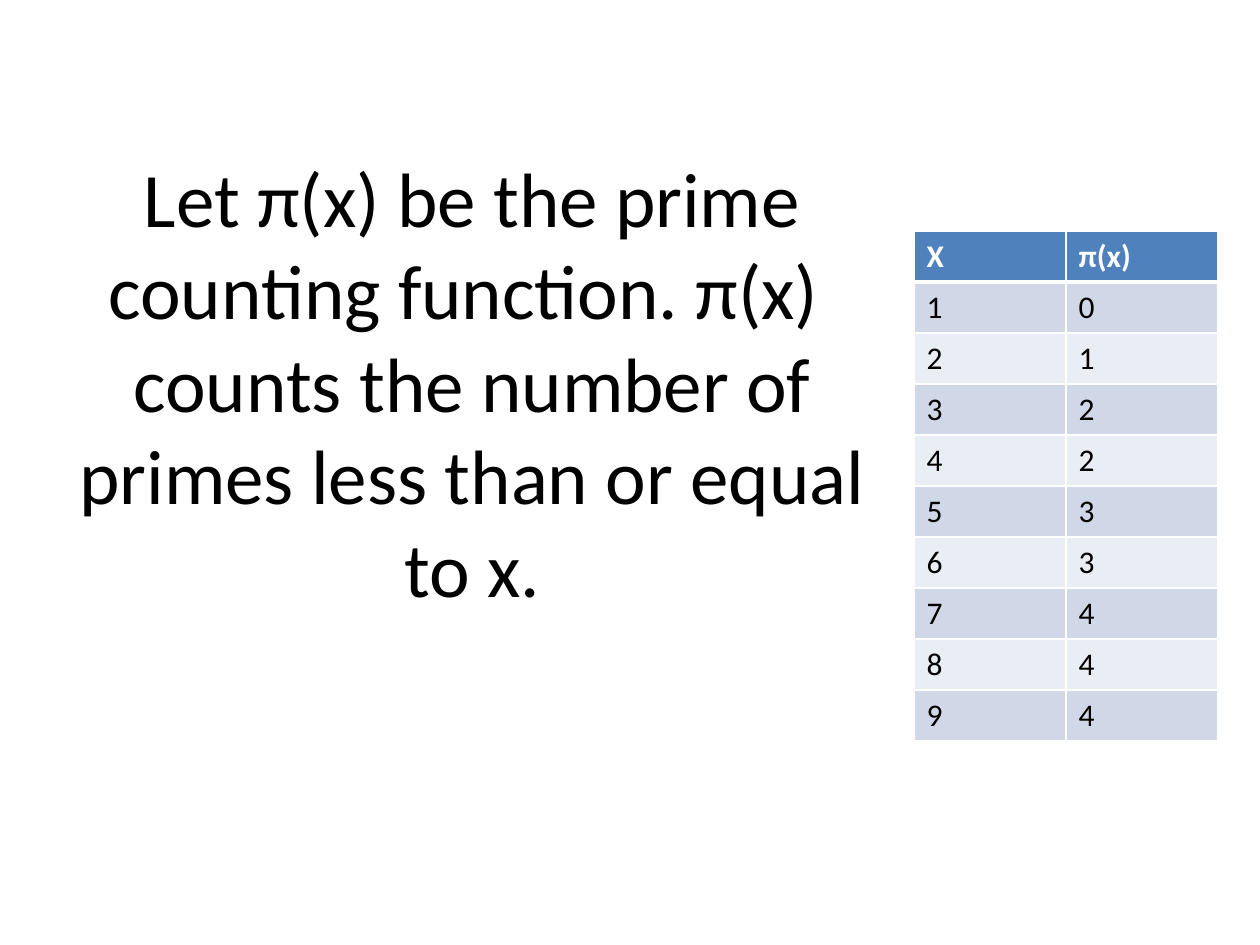
from dataclasses import dataclass

from lxml import etree
from pptx import Presentation
from pptx import util as u
from pptx.dml.color import RGBColor
from pptx.enum import text
from pptx.oxml import ns

PX = 914400 / 126


@dataclass(frozen=True)
class Theme:
    font: str = "Calibri"
    ink: str = "000000"
    white: str = "FFFFFF"
    header: str = "4F81BD"
    bands: tuple = ("D0D8E8", "E9EDF4")
    statement_size: int = 44
    table_size: int = 18
    rule: int = 1
    header_rule: int = 3


THEME = Theme()
STATEMENT = (
    "Let π(x) be the prime counting function. π(x)  counts "
    "the number of primes less than or equal to x."
)
PRIME_COUNTS = [0, 1, 2, 2, 3, 3, 4, 4, 4]


def px(length):
    return u.Emu(round(length * PX))


def write(frame, content, size, color=THEME.ink, bold=False, align=None):
    paragraph = frame.paragraphs[0]
    paragraph.alignment = align
    run = paragraph.add_run()
    run.text = content
    run.font.name = THEME.font
    run.font.size = u.Pt(size)
    run.font.bold = bold
    run.font.color.rgb = RGBColor.from_string(color)


def add_statement(slide, left, top, width, height):
    frame = slide.shapes.add_textbox(px(left), px(top), px(width), px(height)).text_frame
    frame.word_wrap = True
    frame.vertical_anchor = text.MSO_ANCHOR.MIDDLE
    write(frame, STATEMENT, THEME.statement_size, align=text.PP_ALIGN.CENTER)


def set_borders(cell, **widths):
    properties = cell._tc.get_or_add_tcPr()
    for position, side in enumerate("LRTB"):
        line = etree.Element(ns.qn(f"a:ln{side}"), w=str(u.Pt(widths.get(side, THEME.rule))))
        fill = etree.SubElement(line, ns.qn("a:solidFill"))
        etree.SubElement(fill, ns.qn("a:srgbClr"), val=THEME.white)
        properties.insert(position, line)


def fill_cell(cell, content, background, color=THEME.ink, bold=False, **borders):
    cell.fill.solid()
    cell.fill.fore_color.rgb = RGBColor.from_string(background)
    write(cell.text_frame, content, THEME.table_size, color, bold)
    set_borders(cell, **borders)


def add_count_table(slide, left, top, column_width, row_height):
    rows = [("X", "π(x)")] + [(str(x), str(count)) for x, count in enumerate(PRIME_COUNTS, 1)]
    table = slide.shapes.add_table(
        len(rows), 2, px(left), px(top), px(2 * column_width), px(row_height * len(rows))
    ).table
    for column in table.columns:
        column.width = px(column_width)
    for index, values in enumerate(rows):
        table.rows[index].height = px(row_height)
        for cell, value in zip(table.rows[index].cells, values):
            if index == 0:
                fill_cell(cell, value, THEME.header, THEME.white, True, B=THEME.header_rule)
            else:
                top_rule = THEME.header_rule if index == 1 else THEME.rule
                fill_cell(cell, value, THEME.bands[(index - 1) % 2], T=top_rule)


def main():
    deck = Presentation()
    deck.slide_width, deck.slide_height = px(1260), px(945)
    slide = deck.slides.add_slide(deck.slide_layouts[6])
    add_statement(slide, left=63, top=38, width=819, height=687)
    add_count_table(slide, left=914, top=231, column_width=152, row_height=51)
    deck.save("out.pptx")


if __name__ == "__main__":
    main()
